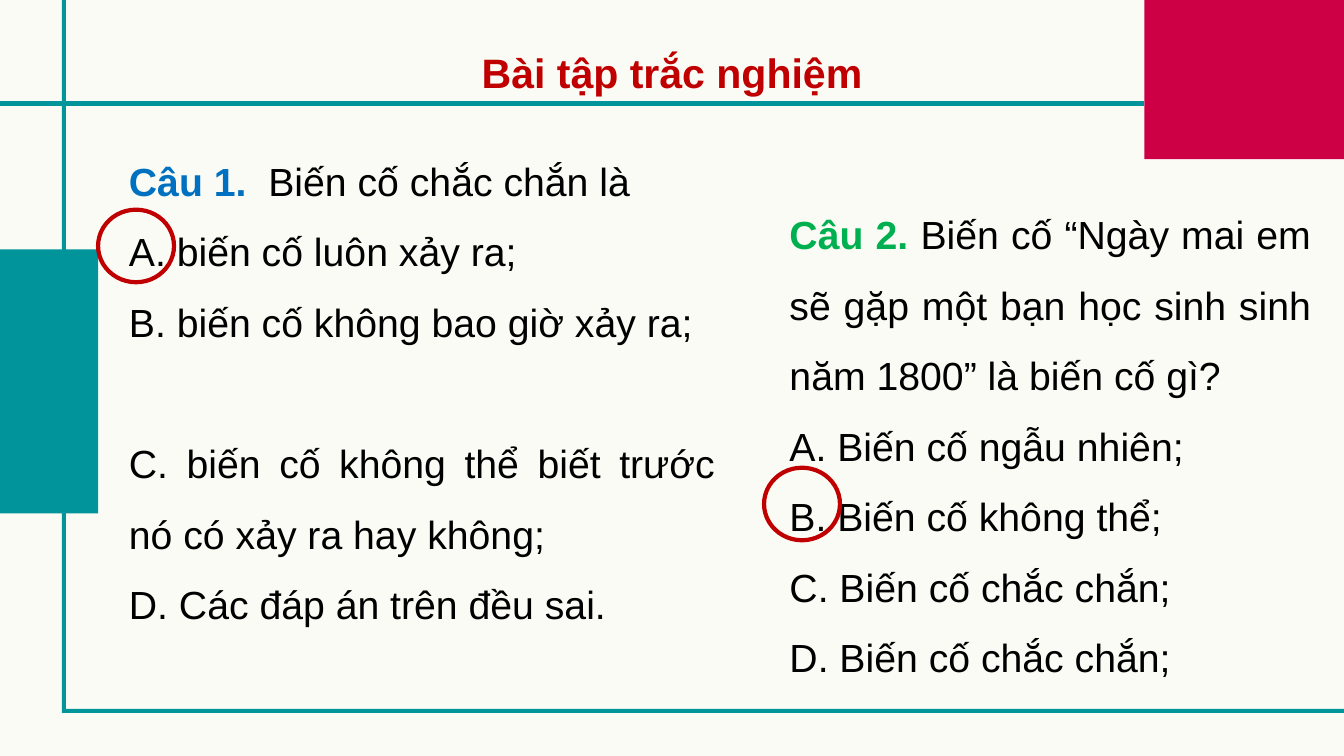
from dataclasses import dataclass

import lxml.etree
import pptx
import pptx.dml.color
import pptx.enum.shapes
import pptx.enum.text
import pptx.oxml.ns
import pptx.util
from pptx.util import Inches

RGBColor = pptx.dml.color.RGBColor
CREAM = RGBColor(0xFB, 0xFB, 0xF5)
TEAL = RGBColor(0x01, 0x94, 0x9A)
CRIMSON = RGBColor(0xCD, 0x00, 0x46)
RED = RGBColor(0xC0, 0x00, 0x00)
BLUE = RGBColor(0x00, 0x70, 0xC0)
GREEN = RGBColor(0x00, 0xB0, 0x50)
BLACK = RGBColor(0x00, 0x00, 0x00)

FONT = "Arial"
LINE_SPACING = 1.5
RULE_WIDTH = pptx.util.Pt(4.5)
FRAME_THICKNESS = 0.06
ANSWER_RING_SIZE = (1.13, 1.08)


@dataclass(frozen=True)
class Box:
    left: float
    top: float
    width: float
    height: float

    def lengths(self) -> tuple:
        return tuple(Inches(v) for v in (self.left, self.top, self.width, self.height))

    def corners(self) -> list:
        left, top, width, height = self.lengths()
        right, bottom = left + width, top + height
        return [(left, top), (left, bottom), (right, bottom), (right, top)]

    def inset(self, margin: float) -> "Box":
        return Box(self.left + margin, self.top + margin,
                   self.width - 2 * margin, self.height - 2 * margin)


@dataclass(frozen=True)
class Block:
    box: Box
    color: RGBColor


@dataclass(frozen=True)
class Question:
    box: Box
    label: str
    label_color: RGBColor
    prompt: str
    answers: tuple
    ring_left: float
    ring_top: float
    gap_after: int = -1


FRAME = Box(0.92, -1.12, 19.7, 11.73)
BLOCKS = (
    Block(Box(-0.96, 3.71, 2.42, 3.93), TEAL),
    Block(Box(17.03, -1.12, 4.24, 3.49), CRIMSON),
)
QUESTIONS = (
    Question(
        Box(1.82, 1.94, 8.92, 6.46), "Câu 1.  ", BLUE, "Biến cố chắc chắn là",
        (
            "A. biến cố luôn xảy ra;",
            "B. biến cố không bao giờ xảy ra;",
            "C. biến cố không thể biết trước nó có xảy ra hay không;",
            "D. Các đáp án trên đều sai.",
        ),
        1.46, 3.12, gap_after=1,
    ),
    Question(
        Box(11.65, 2.73, 7.96, 7.52), "Câu 2. ", GREEN,
        "Biến cố “Ngày mai em sẽ gặp một bạn học sinh sinh năm 1800” là biến cố gì?",
        (
            "A. Biến cố ngẫu nhiên;",
            "B. Biến cố không thể;",
            "C. Biến cố chắc chắn;",
            "D. Biến cố chắc chắn;",
        ),
        11.37, 6.96,
    ),
)


def fill_plain(shape, color: RGBColor) -> None:
    shape.shadow.inherit = False
    shape.fill.solid()
    shape.fill.fore_color.rgb = color
    shape.line.fill.background()


def set_font(font, size: float, color: RGBColor, bold: bool = False) -> None:
    font.name = FONT
    font.size = pptx.util.Pt(size)
    font.bold = bold
    font.color.rgb = color


def draw_frame(slide) -> None:
    outer = FRAME.corners()
    inner = FRAME.inset(FRAME_THICKNESS).corners()[::-1]
    builder = slide.shapes.build_freeform(*outer[0], scale=1.0)
    builder.add_line_segments(outer[1:], close=True)
    builder.move_to(*inner[0])
    builder.add_line_segments(inner[1:], close=True)
    fill_plain(builder.convert_to_shape(), TEAL)


def draw_block(slide, block: Block) -> None:
    rectangle = slide.shapes.add_shape(
        pptx.enum.shapes.MSO_SHAPE.RECTANGLE, *block.box.lengths())
    fill_plain(rectangle, block.color)


def draw_heading_rule(slide) -> None:
    rule = slide.shapes.add_connector(
        pptx.enum.shapes.MSO_CONNECTOR.STRAIGHT,
        Inches(0), Inches(1.54), Inches(17.03), Inches(1.54))
    rule.line.color.rgb = TEAL
    rule.line.width = RULE_WIDTH
    lxml.etree.SubElement(rule._element.spPr, pptx.oxml.ns.qn("a:effectLst"))


def write_heading(slide) -> None:
    heading = slide.shapes.title
    heading.left, heading.top, heading.width, heading.height = Box(
        5.42, 0.29, 9.17, 1.07).lengths()
    frame = heading.text_frame
    frame.text = "Bài tập trắc nghiệm"
    frame.word_wrap = True
    frame.auto_size = pptx.enum.text.MSO_AUTO_SIZE.SHAPE_TO_FIT_TEXT
    frame.vertical_anchor = pptx.enum.text.MSO_ANCHOR.TOP
    paragraph = frame.paragraphs[0]
    paragraph.alignment = pptx.enum.text.PP_ALIGN.CENTER
    paragraph.line_spacing = LINE_SPACING
    set_font(paragraph.font, 44, RED, bold=True)


def write_question(slide, question: Question) -> None:
    frame = slide.shapes.add_textbox(*question.box.lengths()).text_frame
    frame.word_wrap = True
    frame.auto_size = pptx.enum.text.MSO_AUTO_SIZE.SHAPE_TO_FIT_TEXT
    prompt = frame.paragraphs[0]
    for text, color, bold in ((question.label, question.label_color, True),
                              (question.prompt, BLACK, False)):
        run = prompt.add_run()
        run.text = text
        set_font(run.font, 42, color, bold)
    for index, answer in enumerate(question.answers):
        paragraph = frame.add_paragraph()
        paragraph.text = answer
        set_font(paragraph.font, 42, BLACK)
        if index == question.gap_after:
            paragraph.space_after = pptx.util.Pt(75.5)
    for paragraph in frame.paragraphs:
        paragraph.alignment = pptx.enum.text.PP_ALIGN.JUSTIFY
        paragraph.line_spacing = LINE_SPACING


def ring_answer(slide, question: Question) -> None:
    box = Box(question.ring_left, question.ring_top, *ANSWER_RING_SIZE)
    ring = slide.shapes.add_shape(pptx.enum.shapes.MSO_SHAPE.OVAL, *box.lengths())
    ring.shadow.inherit = False
    ring.fill.background()
    ring.line.color.rgb = RED
    ring.line.width = RULE_WIDTH


def main() -> None:
    deck = pptx.Presentation()
    deck.slide_width, deck.slide_height = Inches(20), Inches(11.25)
    slide = deck.slides.add_slide(deck.slide_layouts.get_by_name("Title Only"))
    slide.background.fill.solid()
    slide.background.fill.fore_color.rgb = CREAM
    draw_frame(slide)
    for block in BLOCKS:
        draw_block(slide, block)
    draw_heading_rule(slide)
    write_heading(slide)
    for question in QUESTIONS:
        write_question(slide, question)
    for question in QUESTIONS:
        ring_answer(slide, question)
    deck.save("out.pptx")


if __name__ == "__main__":
    main()
